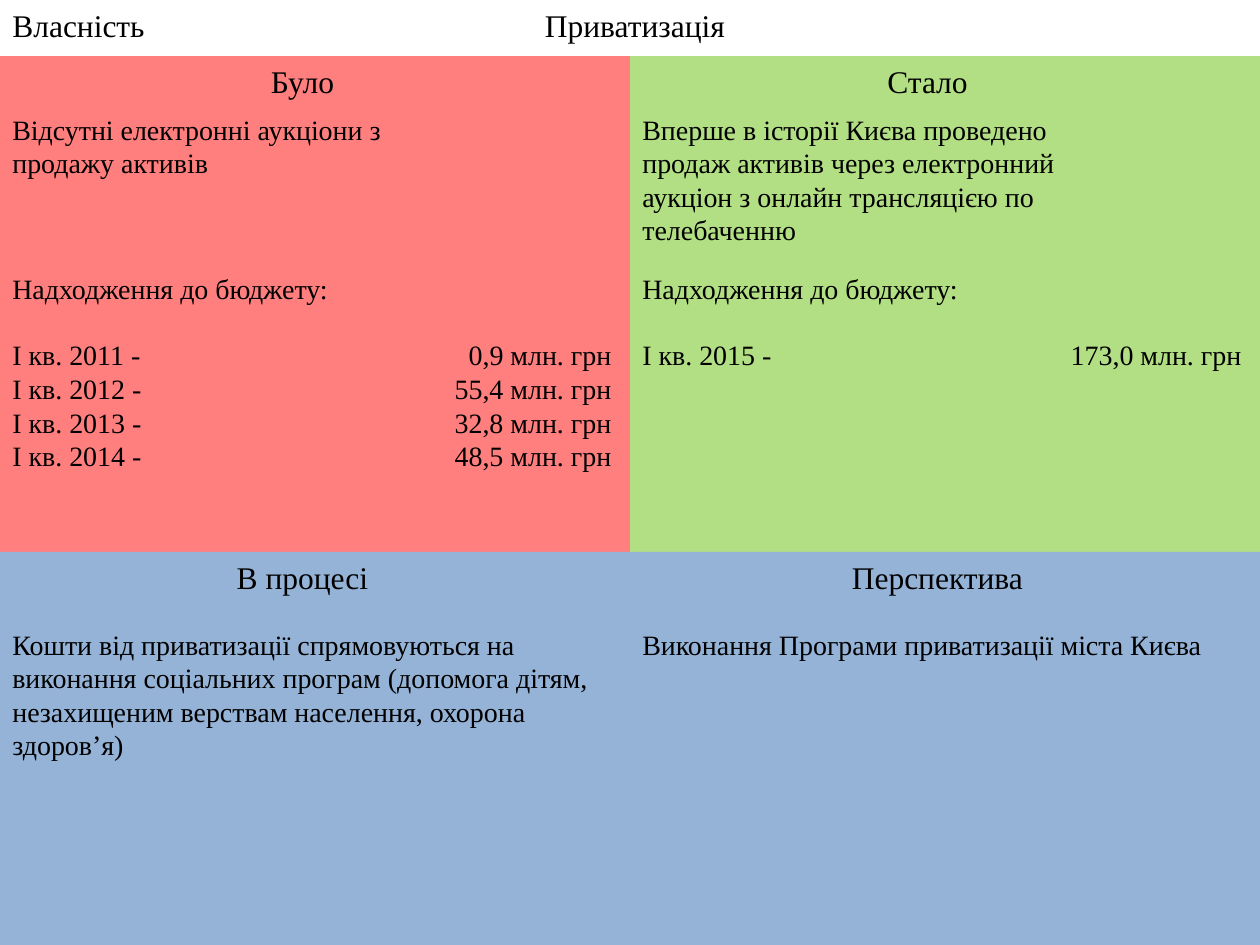
from lxml import etree
from pptx import Presentation
from pptx.dml.color import RGBColor
from pptx.enum.shapes import MSO_SHAPE
from pptx.enum.text import MSO_AUTO_SIZE, PP_ALIGN
from pptx.oxml.ns import qn
from pptx.util import Emu, Pt

RECT = MSO_SHAPE.RECTANGLE
GROW = MSO_AUTO_SIZE.SHAPE_TO_FIT_TEXT
LEFT, CENTER = PP_ALIGN.LEFT, PP_ALIGN.CENTER
SCALE = 914400 / 126  # EMU per px
C = {"before": "FF0000", "after": "92D050", "plans": "95B3D7", "text": "000000"}

W, H = 1260, 945
MID = W // 2
TOP, LOW = 56, 552     # upper edges of the two rows
AMOUNT_TAB = 599       # right edge of the amounts, from the text's left edge


def px(n):
    return Emu(round(n * SCALE))


def add_text(x, y, w, h, lines, size=16, align=LEFT):
    tf = s.shapes.add_textbox(px(x), px(y), px(w), px(h)).text_frame
    tf.word_wrap = True
    tf.auto_size = GROW
    for i, line in enumerate(lines):
        p = tf.paragraphs[0] if i == 0 else tf.add_paragraph()
        p.alignment = align
        if i == 1:  # one line of space under the caption
            p.space_before = Pt(19)
        if "\t" in line:
            tabs = etree.SubElement(p._p.get_or_add_pPr(), qn("a:tabLst"))
            etree.SubElement(tabs, qn("a:tab"), pos=str(px(AMOUNT_TAB)), algn="r")
        r = p.add_run()
        r.text = line
        for key, value in {"name": "Times New Roman", "size": Pt(size)}.items():
            setattr(r.font, key, value)
        r.font.color.rgb = RGBColor.from_string(C["text"])


prs = Presentation()
prs.slide_width, prs.slide_height = px(W), px(H)
s = prs.slides.add_slide(prs.slide_layouts[6])

# Four quadrants: colour and opacity in percent
for x, y, h, color, opacity in [
    (0, TOP, LOW - TOP, "before", 50),
    (MID, TOP, LOW - TOP, "after", 70),
    (0, LOW, H - LOW, "plans", 100),
    (MID, LOW, H - LOW, "plans", 100),
]:
    sp = s.shapes.add_shape(RECT, px(x), px(y), px(MID), px(h))
    sp.shadow.inherit = False
    sp.line.fill.background()
    sp.fill.solid()
    sp.fill.fore_color.rgb = RGBColor.from_string(C[color])
    if opacity < 100:
        clr = sp._element.spPr.find(qn("a:solidFill"))[0]
        etree.SubElement(clr, qn("a:alpha"), val=str(opacity * 1000))

# Title row and quadrant headings
for x, y, w, align, heading in [
    (0, 0, 312, LEFT, "Власність"),
    (352, 0, 566, CENTER, "Приватизація"),
    (154, TOP, 297, CENTER, "Було"),
    (779, TOP, 297, CENTER, "Стало"),
    (154, LOW, 297, CENTER, "В процесі"),
    (789, LOW, 297, CENTER, "Перспектива"),
]:
    add_text(x, y, w, 50, [heading], 18, align)

# Descriptions
for x, y, w, h, text in [
    (0, 106, 441, 81, "Відсутні електронні аукціони з продажу активів"),
    (MID, 106, 446, 149, "Вперше в історії Києва проведено продаж активів через "
                         "електронний аукціон з онлайн трансляцією по телебаченню"),
    (0, 621, MID, 149, "Кошти від приватизації спрямовуються на виконання соціальних "
                       "програм (допомога дітям, незахищеним верствам населення, "
                       "охорона здоров’я)"),
    (MID, 621, MID, 47, "Виконання Програми приватизації міста Києва"),
]:
    add_text(x, y, w, h, [text])

# Budget revenue by year
for x, h, revenue in [
    (0, 217, {2011: "0,9", 2012: "55,4", 2013: "32,8", 2014: "48,5"}),
    (MID, 115, {2015: "173,0"}),
]:
    rows = [f"І кв. {year} -\t{amount} млн. грн" for year, amount in revenue.items()]
    add_text(x, 265, MID, h, ["Надходження до бюджету:"] + rows)

prs.save("out.pptx")
